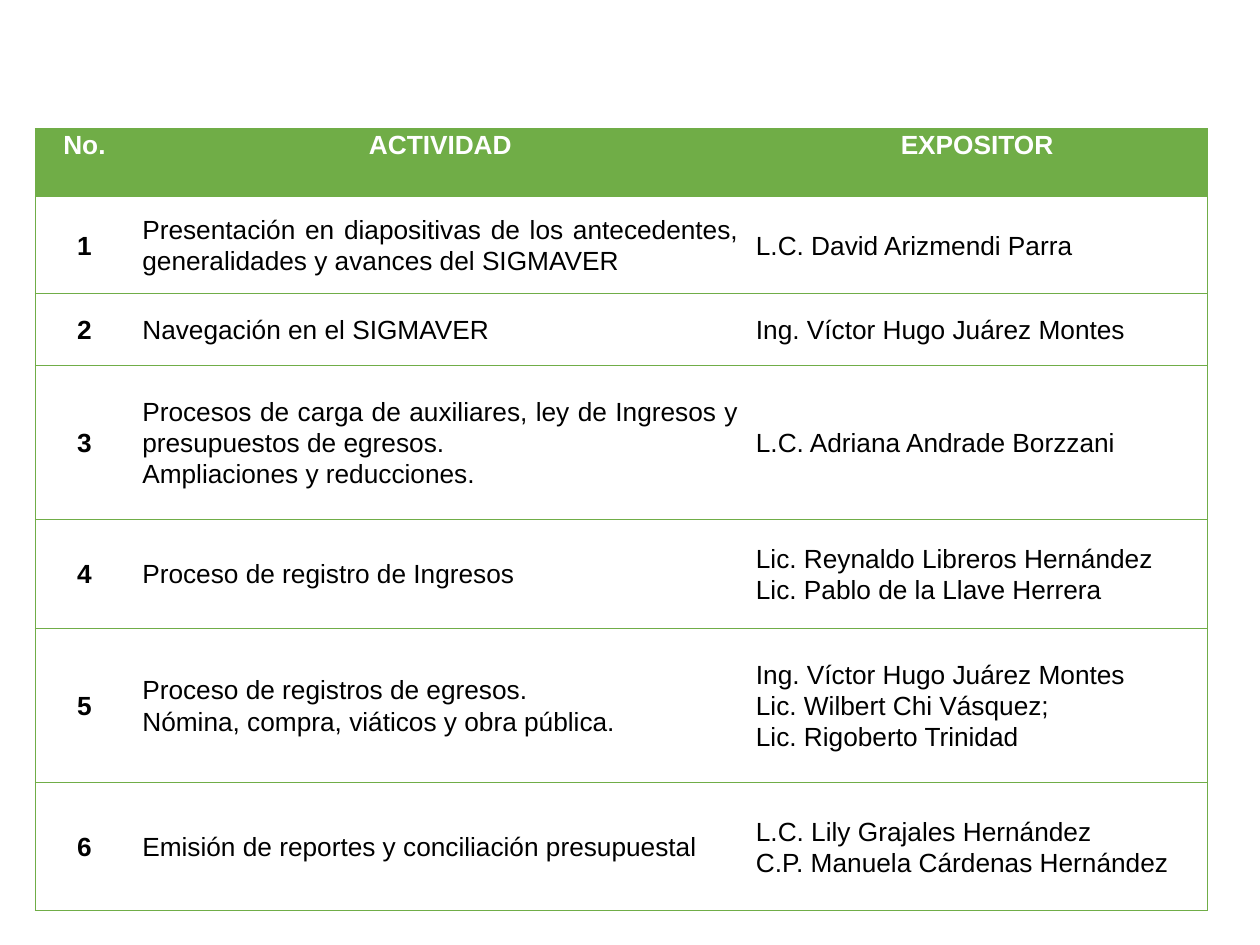
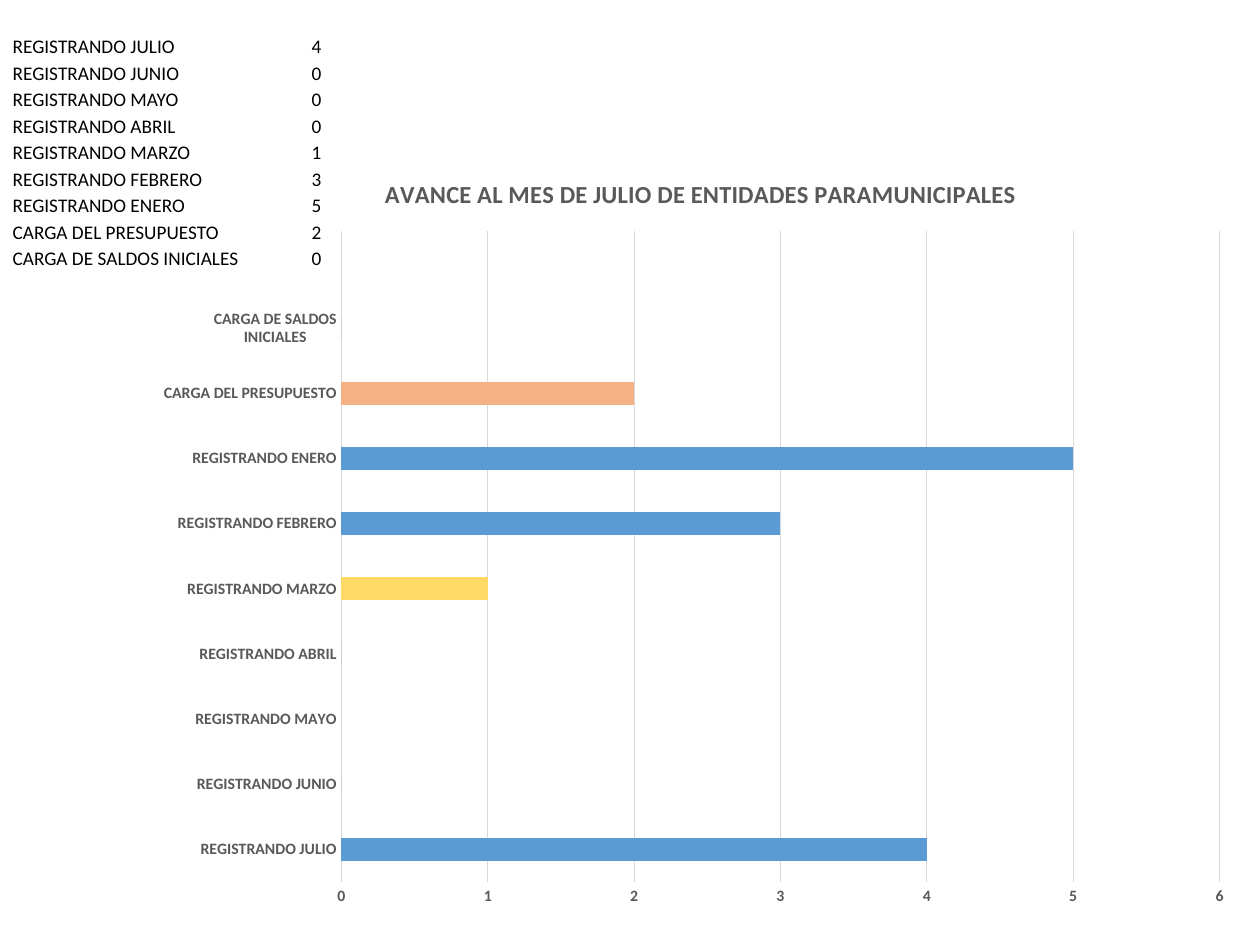
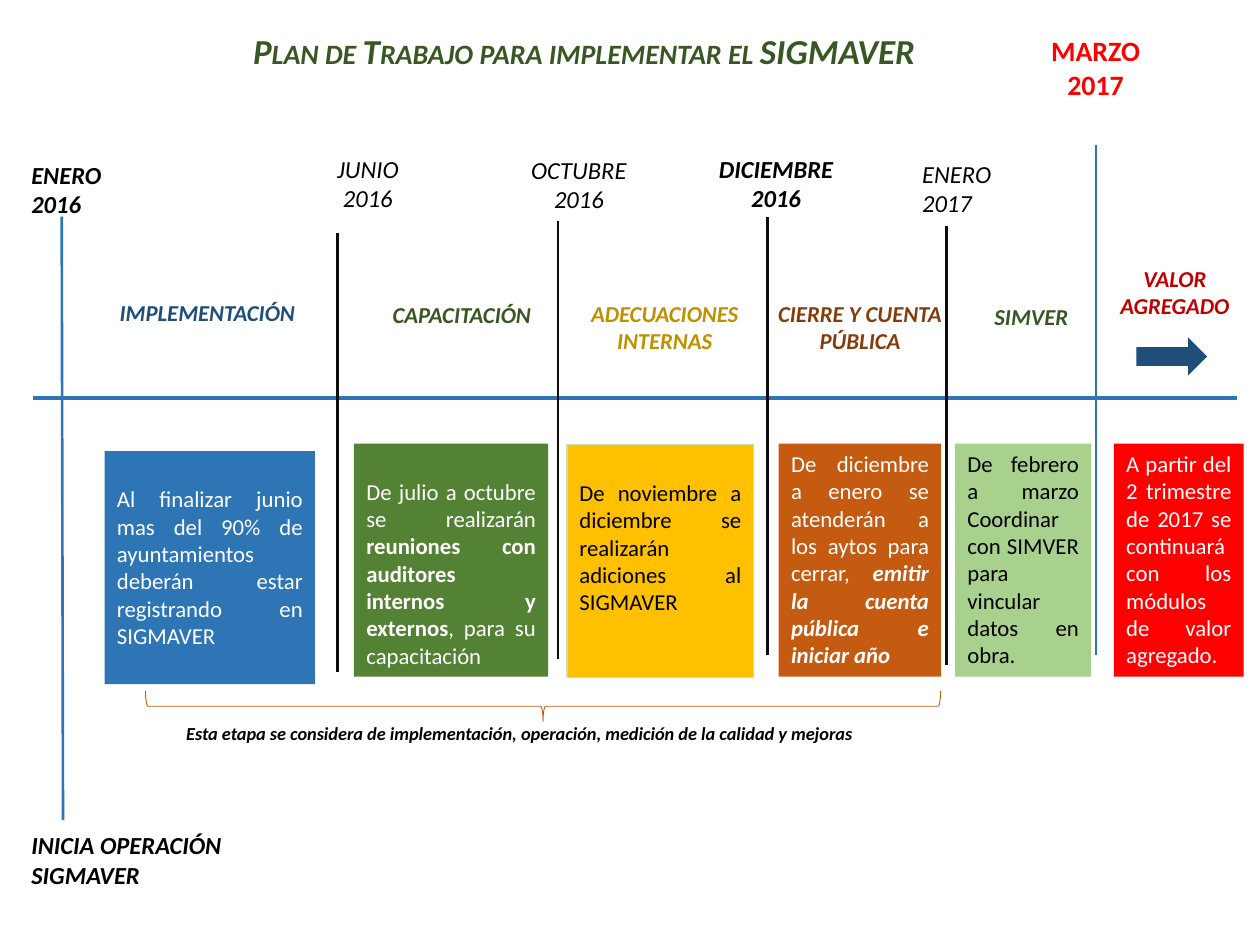
from dataclasses import dataclass
from typing import Any, Optional

from lxml import etree
from pptx import Presentation
from pptx.chart.data import CategoryChartData
from pptx.dml.color import RGBColor
from pptx.enum import chart as ch, shapes, text
from pptx.oxml.ns import qn
from pptx.util import Inches, Pt

BLACK = RGBColor(0x00, 0x00, 0x00)
WHITE = RGBColor(0xFF, 0xFF, 0xFF)
RED = RGBColor(0xFF, 0x00, 0x00)
DARK_RED = RGBColor(0xC0, 0x00, 0x00)
GREEN = RGBColor(0x70, 0xAD, 0x47)
MID_GREEN = RGBColor(0x54, 0x82, 0x35)
DARK_GREEN = RGBColor(0x38, 0x57, 0x23)
LIGHT_GREEN = RGBColor(0xA9, 0xD1, 0x8E)
PALE_GREEN = RGBColor(0xC5, 0xE0, 0xB4)
BLUE = RGBColor(0x2E, 0x75, 0xB6)
BAR_BLUE = RGBColor(0x5B, 0x9B, 0xD5)
NAVY = RGBColor(0x1F, 0x4E, 0x79)
AMBER = RGBColor(0xFF, 0xC0, 0x00)
DARK_AMBER = RGBColor(0xBF, 0x90, 0x00)
YELLOW = RGBColor(0xFF, 0xD9, 0x66)
ORANGE = RGBColor(0xC5, 0x5A, 0x11)
PEACH = RGBColor(0xF4, 0xB1, 0x83)
BROWN = RGBColor(0x84, 0x3C, 0x0B)
GRAY = RGBColor(0x59, 0x59, 0x59)
GRID = RGBColor(0xD9, 0xD9, 0xD9)
INK = RGBColor(0x0D, 0x0D, 0x0D)

LEFT, CENTER = text.PP_ALIGN.LEFT, text.PP_ALIGN.CENTER
RIGHT, JUSTIFY = text.PP_ALIGN.RIGHT, text.PP_ALIGN.JUSTIFY
TOP, MIDDLE = text.MSO_ANCHOR.TOP, text.MSO_ANCHOR.MIDDLE
BOTTOM = text.MSO_ANCHOR.BOTTOM
NO_STYLE = "{2D5ABB26-0587-4C30-8999-92F81FD0307C}"
CHART_W, CHART_H = 8.65, 6.11


@dataclass
class Label:
    x: float
    y: float
    w: float
    h: float
    lines: list[str]
    color: RGBColor = BLACK
    size: float = 14
    bold: bool = True
    italic: bool = True
    align: Any = CENTER


@dataclass
class Stage:
    x: float
    y: float
    w: float
    fill: RGBColor
    color: RGBColor
    runs: list[tuple[str, dict]]
    top: float = 0.05
    line: Optional[RGBColor] = None


@dataclass
class Rule:
    x1: float
    y1: float
    x2: float
    y2: float
    color: RGBColor = INK
    width: float = 1.5


ACTIVITIES = [
    (["Presentación en diapositivas de los antecedentes, generalidades y avances del SIGMAVER"],
     ["L.C. David Arizmendi Parra"]),
    (["Navegación en el SIGMAVER"], ["Ing. Víctor Hugo Juárez Montes"]),
    (["Procesos de carga de auxiliares, ley de Ingresos y presupuestos de egresos.",
      "Ampliaciones y reducciones."], ["L.C. Adriana Andrade Borzzani"]),
    (["Proceso de registro de Ingresos"],
     ["Lic. Reynaldo Libreros Hernández", "Lic. Pablo de la Llave Herrera"]),
    (["Proceso de registros de egresos.", "Nómina, compra, viáticos y obra pública."],
     ["Ing. Víctor Hugo Juárez Montes", "Lic. Wilbert Chi Vásquez;", "Lic. Rigoberto Trinidad"]),
    (["Emisión de reportes y conciliación presupuestal"],
     ["L.C. Lily Grajales Hernández", "C.P. Manuela Cárdenas Hernández"]),
]

PROGRESS = [
    ("REGISTRANDO JULIO", 4), ("REGISTRANDO JUNIO", 0), ("REGISTRANDO MAYO", 0),
    ("REGISTRANDO ABRIL", 0), ("REGISTRANDO MARZO", 1), ("REGISTRANDO FEBRERO", 3),
    ("REGISTRANDO ENERO", 5), ("CARGA DEL PRESUPUESTO", 2), ("CARGA DE SALDOS INICIALES", 0),
]
BAR_COLORS = {2: LIGHT_GREEN, 3: MID_GREEN, 4: YELLOW, 7: PEACH, 8: ORANGE, 9: RED}

RULES = [
    Rule(0.26, 3.16, 9.82, 3.16, BLUE, 2),
    Rule(0.49, 1.72, 0.5, 6.51, BLUE),
    Rule(2.68, 1.85, 2.68, 5.33),
    Rule(4.43, 1.75, 4.43, 5.23),
    Rule(6.09, 1.72, 6.09, 5.2),
    Rule(7.51, 1.79, 7.51, 5.28),
    Rule(8.7, 1.15, 8.7, 5.2, BLUE),
]

LABELS = [
    Label(0.15, 1.22, 0.9, 0.57, ["ENERO 2016"], align=LEFT),
    Label(0.15, 6.54, 1.87, 0.57, ["INICIA OPERACIÓN SIGMAVER"], align=LEFT),
    Label(2.47, 1.17, 0.9, 0.57, ["JUNIO 2016"], bold=False),
    Label(4.08, 1.18, 1.03, 0.57, ["OCTUBRE 2016"], bold=False),
    Label(5.56, 1.17, 1.2, 0.57, ["DICIEMBRE", "2016"]),
    Label(7.22, 1.21, 0.9, 0.57, ["ENERO", "2017"], bold=False, align=LEFT),
    Label(8.09, 0.22, 1.21, 0.64, ["MARZO 2017"], RED, 16, italic=False),
    Label(0.83, 2.32, 1.63, 0.32, ["IMPLEMENTACIÓN"], NAVY, 13),
    Label(2.85, 2.34, 1.63, 0.32, ["CAPACITACIÓN"], DARK_GREEN, 13),
    Label(4.46, 2.33, 1.63, 0.54, ["ADECUACIONES", "INTERNAS"], DARK_AMBER, 13),
    Label(6.06, 2.33, 1.53, 0.54, ["CIERRE Y CUENTA PÚBLICA"], BROWN, 13),
    Label(7.42, 2.35, 1.53, 0.32, ["SIMVER"], DARK_GREEN, 13),
    Label(8.51, 2.05, 1.63, 0.54, ["VALOR", "AGREGADO"], DARK_RED, 13),
    Label(1.38, 5.68, 6.04, 0.28,
          ["Esta etapa se considera de implementación, operación, medición de la calidad y mejoras"],
          size=10.5, align=LEFT),
]

STAGES = [
    Stage(0.83, 3.58, 1.67, BLUE, WHITE,
          [("Al finalizar junio mas del 90% de ayuntamientos deberán estar registrando en SIGMAVER", {})],
          0.27),
    Stage(2.81, 3.52, 1.54, MID_GREEN, WHITE,
          [("De julio a octubre se realizarán ", {}),
           ("reuniones con auditores internos y externos", {"bold": True}),
           (", para su capacitación", {})], 0.27),
    Stage(4.5, 3.53, 1.48, AMBER, BLACK,
          [("De noviembre a diciembre se realizarán adiciones al SIGMAVER", {})],
          0.27, PALE_GREEN),
    Stage(6.18, 3.52, 1.29, ORANGE, WHITE,
          [("De diciembre a enero se atenderán a los aytos para cerrar, ", {}),
           ("emitir la cuenta pública e iniciar año", {"bold": True, "italic": True})]),
    Stage(7.58, 3.52, 1.08, LIGHT_GREEN, BLACK,
          [("De febrero a marzo Coordinar con SIMVER para vincular datos en obra.", {})]),
    Stage(8.84, 3.52, 1.03, RED, WHITE,
          [("A partir del 2 trimestre de 2017 se continuará con los módulos de valor agregado.", {})]),
]


def set_attrs(obj: Any, values: dict) -> None:
    for key, value in values.items():
        setattr(obj, key, value)


def style_font(font: Any, color: RGBColor, size: float, name: str = "Calibri",
               bold: bool = False, italic: bool = False) -> None:
    set_attrs(font, {"name": name, "size": Pt(size), "bold": bold, "italic": italic})
    font.color.rgb = color


def write_lines(tf: Any, lines: list[str], align: Any, spacing: float = 1.0, **font: Any) -> None:
    for i, line in enumerate(lines):
        p = tf.add_paragraph() if i else tf.paragraphs[0]
        set_attrs(p, {"alignment": align, "line_spacing": spacing})
        r = p.add_run()
        r.text = line
        style_font(r.font, **font)


def border_cell(cell: Any, sides: str, color: RGBColor, width: float) -> None:
    tc_pr = cell._tc.get_or_add_tcPr()
    for side in sides:
        ln = etree.SubElement(tc_pr, qn(f"a:ln{side}"), w=str(Pt(width)))
        fill = etree.SubElement(ln, qn("a:solidFill"))
        etree.SubElement(fill, qn("a:srgbClr"), val=str(color))


def add_grid(s: Any, x: float, y: float, widths: list[float], heights: list[float]) -> Any:
    frame = s.shapes.add_table(len(heights), len(widths), Inches(x), Inches(y),
                               Inches(sum(widths)), Inches(sum(heights)))
    tbl = frame.table
    set_attrs(tbl, {"first_row": False, "horz_banding": False})
    tbl._tbl.tblPr.find(qn("a:tableStyleId")).text = NO_STYLE
    for col, width in zip(tbl.columns, widths):
        col.width = Inches(width)
    for row, height in zip(tbl.rows, heights):
        row.height = Inches(height)
    return tbl


def set_cell(cell: Any, anchor: Any, side: float, top: float) -> None:
    set_attrs(cell, {"vertical_anchor": anchor, "margin_left": Inches(side),
                     "margin_right": Inches(side), "margin_top": Inches(top),
                     "margin_bottom": 0})


def set_layout(parent: Any, before: Optional[str], **values: Any) -> None:
    for old in parent.findall(qn("c:layout")):
        parent.remove(old)
    layout = etree.Element(qn("c:layout"))
    manual = etree.SubElement(layout, qn("c:manualLayout"))
    for key, value in values.items():
        etree.SubElement(manual, qn(f"c:{key}"), val=str(value))
    if before:
        parent.find(qn(before)).addprevious(layout)
    else:
        parent.insert(0, layout)


def add_label(s: Any, label: Label) -> None:
    sp = s.shapes.add_textbox(*map(Inches, (label.x, label.y, label.w, label.h)))
    sp.text_frame.word_wrap = True
    write_lines(sp.text_frame, label.lines, label.align, color=label.color,
                size=label.size, bold=label.bold, italic=label.italic)


def add_block(s: Any, kind: Any, x: float, y: float, w: float, h: float,
              fill: Optional[RGBColor], line: Optional[RGBColor] = None,
              width: float = 0.75) -> Any:
    sp = s.shapes.add_shape(kind, *map(Inches, (x, y, w, h)))
    sp.shadow.inherit = False
    if fill is None:
        sp.fill.background()
    else:
        sp.fill.solid()
        sp.fill.fore_color.rgb = fill
    if line is None:
        sp.line.fill.background()
    else:
        sp.line.color.rgb = line
        sp.line.width = Pt(width)
    return sp


def add_stage(s: Any, stage: Stage) -> None:
    sp = add_block(s, shapes.MSO_SHAPE.RECTANGLE, stage.x, stage.y, stage.w, 1.85,
                   stage.fill, stage.line)
    tf = sp.text_frame
    set_attrs(tf, {"word_wrap": True, "vertical_anchor": TOP, "margin_top": Inches(stage.top)})
    p = tf.paragraphs[0]
    p.alignment = JUSTIFY
    for words, emphasis in stage.runs:
        r = p.add_run()
        r.text = words
        style_font(r.font, stage.color, 13, **emphasis)


def add_rule(s: Any, rule: Rule) -> None:
    c = s.shapes.add_connector(shapes.MSO_CONNECTOR.STRAIGHT,
                               *map(Inches, (rule.x1, rule.y1, rule.x2, rule.y2)))
    c.line.color.rgb = rule.color
    c.line.width = Pt(rule.width)
    etree.SubElement(c._element.spPr, qn("a:effectLst"))


def build_agenda(s: Any) -> None:
    tbl = add_grid(s, 0.28, 1.02, [0.78, 4.87, 3.65], [0.54, 0.77, 0.57, 1.22, 0.87, 1.22, 1.02])
    rows = [(["No."], ["ACTIVIDAD"], ["EXPOSITOR"])]
    rows += [([str(i)], *row) for i, row in enumerate(ACTIVITIES, 1)]
    for i, row in enumerate(rows):
        for j, lines in enumerate(row):
            cell = tbl.cell(i, j)
            header = i == 0
            set_cell(cell, TOP if header else MIDDLE, 0.07, 0)
            border_cell(cell, ("L", "", "R")[j] + "TB", GREEN, 0.5)
            if header:
                cell.fill.solid()
                cell.fill.fore_color.rgb = GREEN
            else:
                cell.fill.background()
            write_lines(cell.text_frame, lines, CENTER if header else (CENTER, JUSTIFY, LEFT)[j],
                        1.07, color=WHITE if header else BLACK, size=15, name="Arial",
                        bold=header or j == 0)


def add_progress_chart(s: Any) -> None:
    data = CategoryChartData()
    names, values = zip(*PROGRESS)
    data.categories = [*names, ""]
    data.add_series("Series 1", [*values, None])
    chart = s.shapes.add_chart(ch.XL_CHART_TYPE.BAR_CLUSTERED,
                               *map(Inches, (1.24, 1.2, CHART_W, CHART_H)), data).chart
    chart.has_legend = False
    style_font(chart.font, BLACK, 10, bold=True)
    chart.has_title = True
    write_lines(chart.chart_title.text_frame, ["AVANCE AL MES DE JULIO DE ENTIDADES PARAMUNICIPALES"],
                CENTER, color=GRAY, size=14, bold=True)
    set_layout(chart.chart_title._element, "c:overlay", xMode="edge", yMode="edge",
               x=1.78 / CHART_W, y=0.17 / CHART_H)
    set_layout(chart._chartSpace.chart.plotArea, None, layoutTarget="inner", xMode="edge",
               yMode="edge", x=1.47 / CHART_W, y=0.63 / CHART_H,
               w=6.97 / CHART_W, h=5.17 / CHART_H)

    plot = chart.plots[0]
    set_attrs(plot, {"gap_width": 182, "vary_by_categories": False})
    series = plot.series[0]
    series.format.fill.solid()
    series.format.fill.fore_color.rgb = BAR_BLUE
    for i, color in BAR_COLORS.items():
        fill = series.points[i].format.fill
        fill.solid()
        fill.fore_color.rgb = color

    cat, val = chart.category_axis, chart.value_axis
    for axis in (cat, val):
        set_attrs(axis, {"major_tick_mark": ch.XL_TICK_MARK.NONE,
                         "minor_tick_mark": ch.XL_TICK_MARK.NONE})
        style_font(axis.tick_labels.font, GRAY, 9, bold=True)
    set_attrs(val, {"minimum_scale": 0, "maximum_scale": 6, "major_unit": 1,
                    "has_major_gridlines": True})
    val.format.line.fill.background()
    for line in (cat.format.line, val.major_gridlines.format.line):
        line.color.rgb = GRID
        line.width = Pt(0.75)


def build_progress(s: Any) -> None:
    add_progress_chart(s)
    tbl = add_grid(s, 0.09, 0.26, [2.03, 0.44], [0.21] * len(PROGRESS))
    for i, row in enumerate(PROGRESS):
        for j, value in enumerate(row):
            cell = tbl.cell(i, j)
            set_cell(cell, BOTTOM, 0.01, 0.01)
            border_cell(cell, "LRTB", WHITE, 1)
            cell.fill.solid()
            cell.fill.fore_color.rgb = WHITE
            write_lines(cell.text_frame, [str(value)], (LEFT, RIGHT)[j], color=BLACK, size=11)


def build_plan(s: Any) -> None:
    title = s.shapes.title
    set_attrs(title, {"left": Inches(1.85), "top": Inches(0.19),
                      "width": Inches(5.57), "height": Inches(0.42)})
    tf = title.text_frame
    set_attrs(tf, {"auto_size": text.MSO_AUTO_SIZE.NONE, "vertical_anchor": MIDDLE,
                   "word_wrap": True})
    write_lines(tf, ["Plan de Trabajo para implementar el SIGMAVER"], CENTER,
                color=DARK_GREEN, size=20, bold=True, italic=True)
    tf.paragraphs[0].runs[0].font._element.set("cap", "small")

    for rule in RULES:
        add_rule(s, rule)
    for stage in STAGES:
        add_stage(s, stage)
    for label in LABELS:
        add_label(s, label)
    add_block(s, shapes.MSO_SHAPE.RIGHT_ARROW, 9.02, 2.68, 0.56, 0.3, NAVY)
    brace = add_block(s, shapes.MSO_SHAPE.LEFT_BRACE, 4.19, 2.45, 0.24, 6.31, None, ORANGE, 0.5)
    brace.rotation = 270


def main() -> None:
    prs = Presentation()
    set_attrs(prs, {"slide_width": Inches(10), "slide_height": Inches(7.5)})
    title_only, blank = prs.slide_layouts[5], prs.slide_layouts[6]
    for build, layout in ((build_agenda, blank), (build_progress, blank), (build_plan, title_only)):
        build(prs.slides.add_slide(layout))
    prs.save("out.pptx")


if __name__ == "__main__":
    main()
